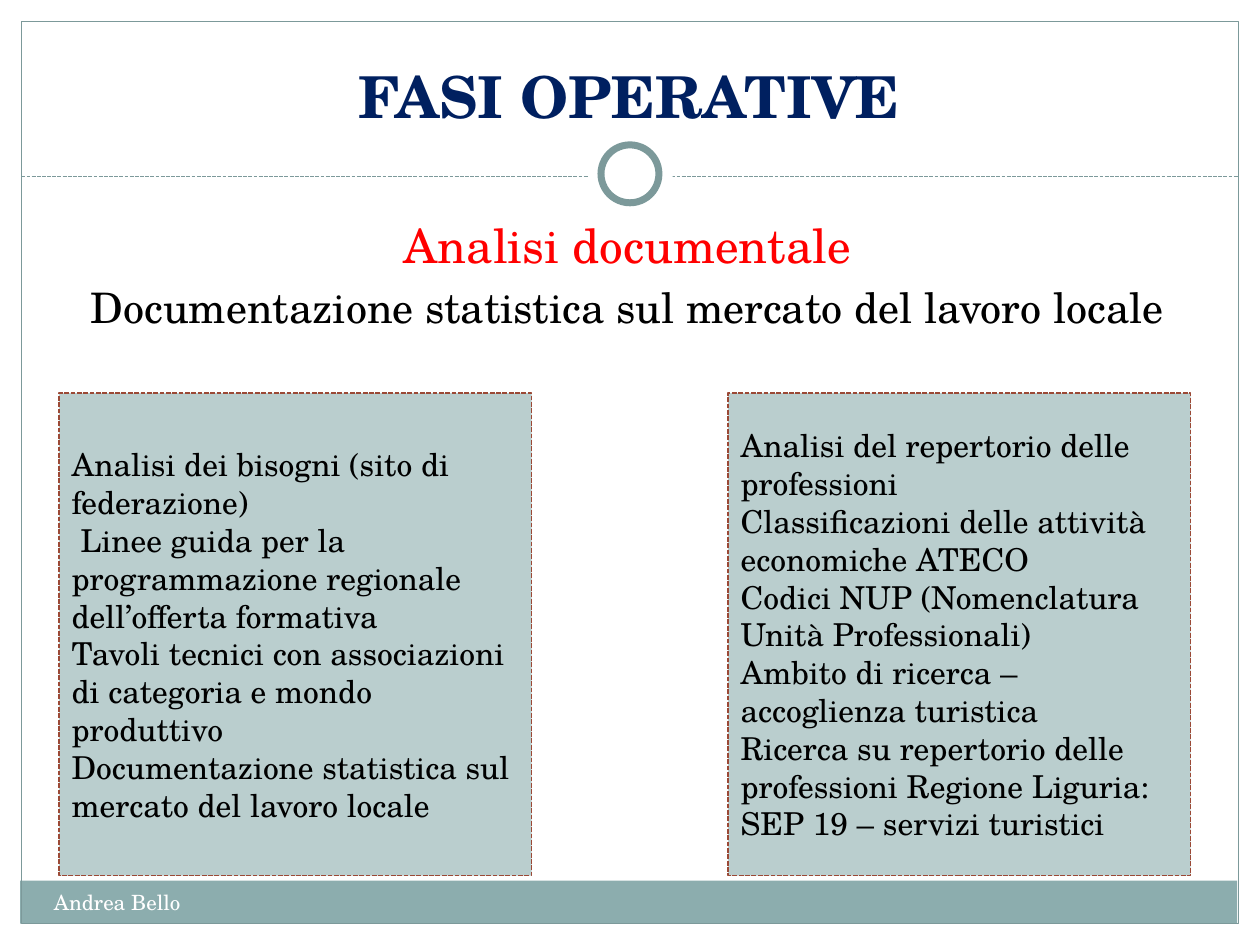
"""Build the "Fasi operative" slide with two panels of document sources."""
import pptx
import pptx.dml.color
import pptx.enum.dml
import pptx.enum.shapes
import pptx.enum.text
import pptx.oxml
import pptx.util

Inches = pptx.util.Inches
Pt = pptx.util.Pt
SHAPES = pptx.enum.shapes.MSO_SHAPE
ALIGN = pptx.enum.text.PP_ALIGN
ANCHOR = pptx.enum.text.MSO_ANCHOR
DASH = pptx.enum.dml.MSO_LINE.SQUARE_DOT

FONT = "TeX Gyre Schola"
COLORS = {
    "white": "FFFFFF", "black": "000000", "navy": "002060", "red": "FF0000",
    "band": "8CADAE", "frame": "7C999A", "panel": "BACECE", "rust": "9B4936",
}

DECORATIONS = [
    (SHAPES.RECTANGLE, (0, 0, 10, 1.52), "white", None),
    (SHAPES.RECTANGLE, (0, 0, 0.17, 7.5), "white", None),
    (SHAPES.RECTANGLE, (9.83, 0, 0.17, 7.5), "white", None),
    (SHAPES.RECTANGLE, (0.16, 6.99, 9.66, 0.34), "band", None),
    (SHAPES.RECTANGLE, (0.17, 0.17, 9.66, 7.16), None, ("frame", 0.75)),
]
RINGS = [
    (SHAPES.OVAL, (4.67, 1.05, 0.67, 0.67), "white", None),
    (SHAPES.OVAL, (4.77, 1.15, 0.46, 0.46), "white", ("frame", 4)),
]
DIVIDER = (0.17, 1.4, 9.83, 1.4)

TEXTS = [
    ((0.33, 0.25, 9.33, 0.83), ANCHOR.BOTTOM, ALIGN.CENTER,
     [("FASI OPERATIVE", 33, "navy", True, 0)]),
    ((0.33, 7.01, 3.92, 0.4), ANCHOR.TOP, ALIGN.LEFT,
     [("Andrea Bello", 12, "white", False, 0)]),
    ((0.33, 1.67, 9.3, 5), ANCHOR.TOP, ALIGN.CENTER,
     [("Analisi documentale", 27, "red", False, 0.2),
      ("Documentazione statistica sul mercato del lavoro locale",
       24, "black", False, 0.2)]),
]
PANELS = [
    ((0.47, 3.12, 3.75, 3.83), [
        "Analisi dei bisogni (sito di federazione)",
        " Linee guida per la programmazione regionale dell’offerta formativa",
        "Tavoli tecnici con associazioni di categoria e mondo produttivo",
        "Documentazione statistica sul mercato del lavoro locale",
    ]),
    ((5.78, 3.12, 3.67, 3.83), [
        "Analisi del repertorio delle professioni",
        "Classificazioni delle attività economiche ATECO",
        "Codici NUP (Nomenclatura Unità Professionali)",
        "Ambito di ricerca – accoglienza turistica",
        "Ricerca su repertorio delle professioni Regione Liguria: "
        "SEP 19 – servizi turistici",
    ]),
]


def color(name):
    return pptx.dml.color.RGBColor.from_string(COLORS[name])


def set_line(line, name, width, dash=None):
    line.color.rgb = color(name)
    line.width = Pt(width)
    if dash:
        line.dash_style = dash


def add_shape(slide, kind, box, fill, outline, dash=None):
    shape = slide.shapes.add_shape(kind, *map(Inches, box))
    shape.shadow.inherit = False
    if fill:
        shape.fill.solid()
        shape.fill.fore_color.rgb = color(fill)
    else:
        shape.fill.background()
    if outline:
        set_line(shape.line, *outline, dash)
    else:
        shape.line.fill.background()
    return shape


def write_text(frame, anchor, alignment, lines):
    frame.word_wrap = True
    frame.vertical_anchor = anchor
    for index, (text, size, name, bold, spacing) in enumerate(lines):
        paragraph = frame.add_paragraph() if index else frame.paragraphs[0]
        paragraph.alignment = alignment
        paragraph.space_before = Pt(size * spacing)
        run = paragraph.add_run()
        run.text = text
        run.font.color.rgb = color(name)
        for key, value in {"name": FONT, "size": Pt(size), "bold": bold}.items():
            setattr(run.font, key, value)


def add_divider(slide):
    divider = slide.shapes.add_connector(
        pptx.enum.shapes.MSO_CONNECTOR.STRAIGHT, *map(Inches, DIVIDER))
    set_line(divider.line, "frame", 0.75, DASH)
    properties = divider.element.spPr
    properties.append(pptx.oxml.parse_xml(
        '<a:effectLst xmlns:a='
        '"http://schemas.openxmlformats.org/drawingml/2006/main"/>'))


def main():
    presentation = pptx.Presentation()
    presentation.slide_width = Inches(10)
    presentation.slide_height = Inches(7.5)
    slide = presentation.slides.add_slide(presentation.slide_layouts[6])

    for decoration in DECORATIONS:
        add_shape(slide, *decoration)
    add_divider(slide)
    for ring in RINGS:
        add_shape(slide, *ring)
    for box, anchor, alignment, lines in TEXTS:
        text_box = slide.shapes.add_textbox(*map(Inches, box))
        write_text(text_box.text_frame, anchor, alignment, lines)
    for box, items in PANELS:
        panel = add_shape(slide, SHAPES.RECTANGLE, box, "panel", ("rust", 0.9), DASH)
        lines = [(item, 18, "black", False, 0) for item in items]
        write_text(panel.text_frame, ANCHOR.MIDDLE, ALIGN.LEFT, lines)

    presentation.save("out.pptx")


if __name__ == "__main__":
    main()
